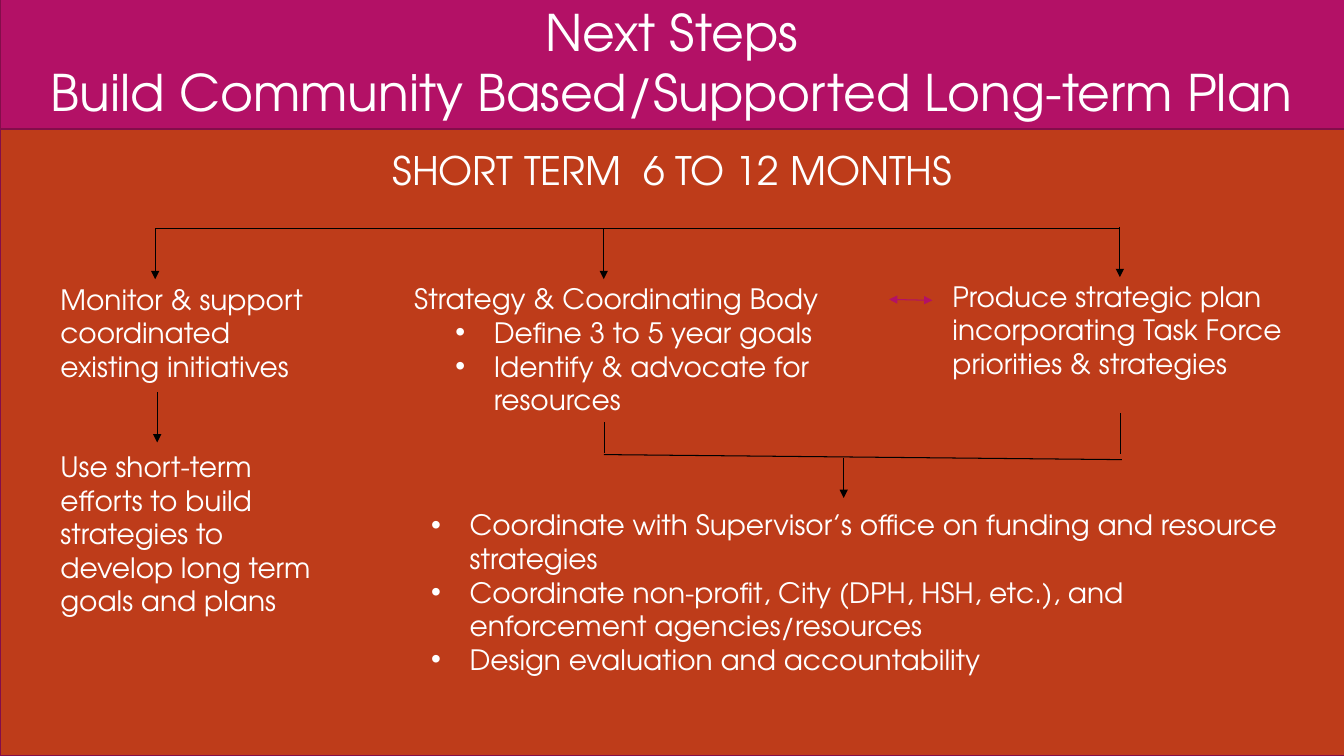
from dataclasses import dataclass

from lxml import etree
from pptx import Presentation, util as u
from pptx.dml.color import RGBColor
from pptx.enum import shapes, text
from pptx.oxml import ns


@dataclass
class Theme:
    font: str = "TeX Gyre Adventor"
    pink: str = "B31166"
    plum: str = "840D4B"
    rust: str = "BE3C1A"
    ink: str = "000000"
    white: str = "FFFFFF"
    title: int = 36
    head: int = 28
    body: int = 20
    edge: float = 1.5
    thin: float = 0.75


class Deck:
    COLS, ROWS = 40, 30

    def __init__(self, theme):
        self.theme = theme
        self.show = Presentation()
        self.show.slide_width = u.Inches(13.33)
        self.show.slide_height = u.Inches(7.5)
        self.slide = self.show.slides.add_slide(self.show.slide_layouts[5])

    def grid(self, *cells):
        units = (self.show.slide_width / self.COLS, self.show.slide_height / self.ROWS)
        return [round(cell * units[i % 2]) for i, cell in enumerate(cells)]

    def color(self, name):
        return RGBColor.from_string(getattr(self.theme, name))

    def panel(self, cells, fill):
        panel = self.slide.shapes.add_shape(shapes.MSO_SHAPE.RECTANGLE, *self.grid(*cells))
        panel.shadow.inherit = False
        panel.fill.solid()
        panel.fill.fore_color.rgb = self.color(fill)
        panel.line.color.rgb = self.color("plum")
        panel.line.width = u.Pt(self.theme.edge)
        return panel

    def label(self, box, words, size, center=False, bullet=False):
        frame = box.text_frame
        frame.text = words
        frame.word_wrap = True
        frame.auto_size = text.MSO_AUTO_SIZE.NONE
        frame.vertical_anchor = text.MSO_ANCHOR.TOP
        for para in frame.paragraphs:
            para.alignment = text.PP_ALIGN.CENTER if center else text.PP_ALIGN.LEFT
            if bullet:
                props = para._p.get_or_add_pPr()
                indent = u.Inches(0.38)
                props.set("marL", str(indent))
                props.set("indent", str(-indent))
                etree.SubElement(props, ns.qn("a:buFont"), typeface="Arial")
                etree.SubElement(props, ns.qn("a:buChar"), char="•")
            for run in para.runs:
                run.font.name = self.theme.font
                run.font.size = u.Pt(size)
                run.font.color.rgb = self.color("white")

    def note(self, cells, words, size=None, **style):
        box = self.slide.shapes.add_textbox(*self.grid(*cells))
        self.label(box, words, size or self.theme.body, **style)

    def title(self, cells, words, panel):
        title = self.slide.shapes.title
        title.left, title.top, title.width, title.height = self.grid(*cells)
        self.label(title, words, self.theme.title, center=True)
        panel.element.addnext(title.element)

    def line(self, cells, tips=(), color="ink"):
        line = self.slide.shapes.add_connector(
            shapes.MSO_CONNECTOR.STRAIGHT, *self.grid(*cells))
        line.line.color.rgb = self.color(color)
        line.line.width = u.Pt(self.theme.thin)
        props = line.element.spPr
        for tip in tips:
            etree.SubElement(props.find(ns.qn("a:ln")), ns.qn(f"a:{tip}End"), type="triangle")
        etree.SubElement(props, ns.qn("a:effectLst"))

    def drop(self, col, row, size, tips=("tail",)):
        self.line((col, row, col, row + size), tips)


def main():
    theme = Theme()
    deck = Deck(theme)
    deck.panel((0, 4.28, 40.53, 25.72), "rust")
    banner = deck.panel((0, -1.16, 40.53, 6.28), "pink")
    deck.title((-0.27, -0.16, 40.53, 5.24),
               "Next Steps\nBuild Community Based/Supported Long-term Plan", banner)
    deck.note((0.9, 5.6, 38.22, 2.28), "SHORT TERM  6 TO 12 MONTHS", theme.head, center=True)

    left, mid, right = 4.62, 17.97, 33.33
    deck.line((right, 9.08, left, 9.08))
    for col, row in ((left, 9.08), (mid, 9.08), (right, 9)):
        deck.drop(col, row, 2)

    deck.note((1.5, 11, 8.28, 4.44), "Monitor & support coordinated existing initiatives")
    deck.drop(4.68, 15.56, 2)
    deck.note((1.5, 17.64, 8.85, 7.12),
              "Use short-term efforts to build strategies to develop long term goals and plans")

    deck.note((12.03, 10.96, 15.72, 1.76), "Strategy & Coordinating Body")
    deck.note((13.26, 12.32, 12.81, 4.44),
              "Define 3 to 5 year goals\nIdentify & advocate for resources", bullet=True)
    deck.line((26.46, 11.88, 27.75, 11.92), ("head", "tail"), "pink")
    deck.note((28.05, 10.88, 10.83, 4.44),
              "Produce strategic plan incorporating Task Force priorities & strategies")

    deck.drop(18, 16.76, 1.2, ())
    deck.drop(33.36, 16.4, 1.6, ())
    deck.line((33.39, 18.24, mid, 18.04))
    deck.drop(25.11, 18.16, 1.6)
    deck.note((12.54, 19.96, 25.95, 7.12),
              "Coordinate with Supervisor’s office on funding and resource strategies\n"
              "Coordinate non-profit, City (DPH, HSH, etc.), and enforcement agencies/resources\n"
              "Design evaluation and accountability", bullet=True)
    deck.show.save("out.pptx")


if __name__ == "__main__":
    main()
